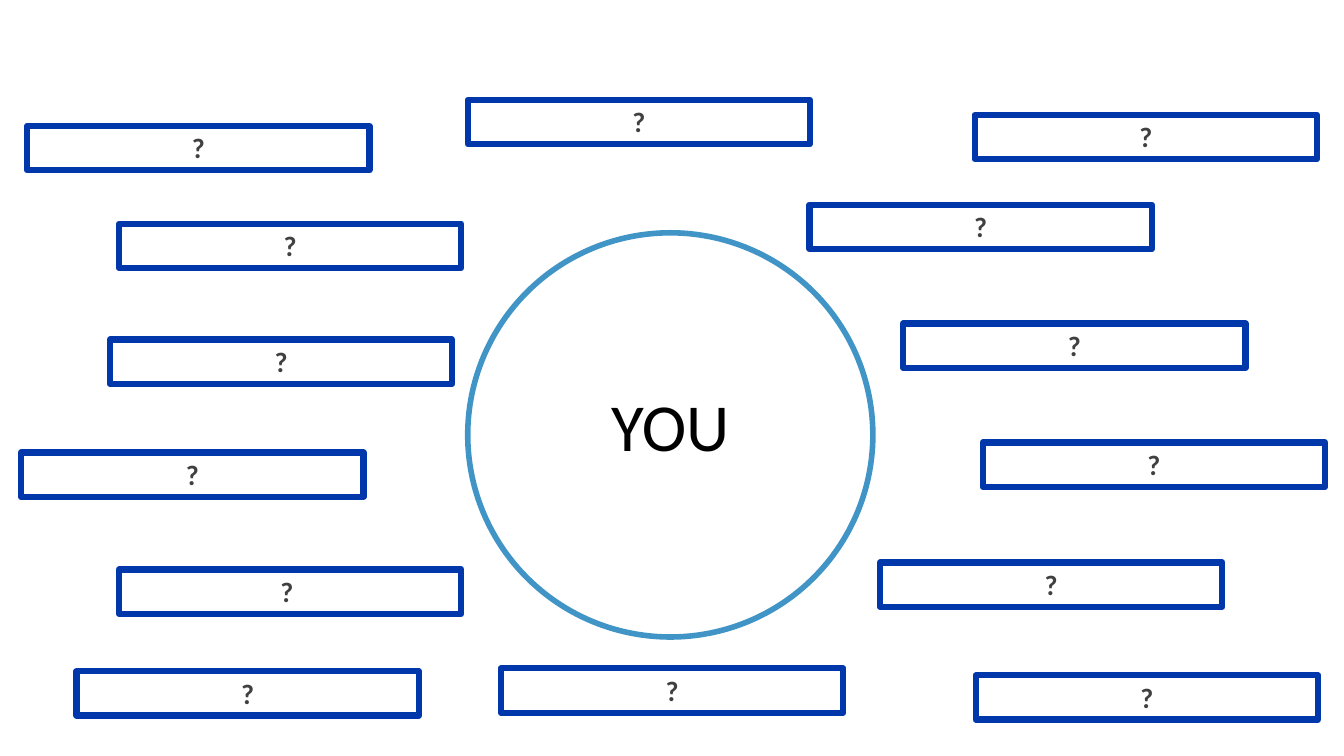
from typing import NamedTuple

from pptx import Presentation
from pptx.dml.color import RGBColor
from pptx.enum.shapes import MSO_SHAPE
from pptx.enum.text import MSO_ANCHOR, MSO_AUTO_SIZE, PP_ALIGN
from pptx.shapes.autoshape import Shape
from pptx.slide import Slide
from pptx.util import Pt

OVAL = MSO_SHAPE.OVAL
RECTANGLE = MSO_SHAPE.RECTANGLE
CENTER = PP_ALIGN.CENTER
MIDDLE = MSO_ANCHOR.MIDDLE
FIT_SHAPE = MSO_AUTO_SIZE.SHAPE_TO_FIT_TEXT

BLACK = RGBColor(0x00, 0x00, 0x00)
DARK_GRAY = RGBColor(0x40, 0x40, 0x40)
ROYAL_BLUE = RGBColor(0x00, 0x37, 0xAA)
SKY_BLUE = RGBColor(0x41, 0x94, 0xC6)
FONT = "Calibri"
LABEL_WIDTH, LABEL_HEIGHT = 244.5, 31.7


class Area(NamedTuple):
    left: float
    top: float
    width: float
    height: float


class Label(NamedTuple):
    left: float
    top: float
    text: str = "?"


CIRCLE = Area(334.1, 166.3, 289.4, 288.7)
CENTER_TEXT = Area(356.4, 261.4, 244.8, 83.5)
LABELS = [
    Label(15.1, 323.3),
    Label(702, 316.1),
    Label(78.5, 242.6),
    Label(696.2, 82.1),
    Label(19.4, 90),
    Label(645.1, 231.1),
    Label(628.6, 401.8),
    Label(85, 406.8, "? "),
    Label(357.8, 477.4),
    Label(697, 482.4),
    Label(54.7, 479.5),
    Label(334.1, 71.3),
    Label(578.2, 146.2),
    Label(85, 159.8),
]


def add_outline(page: Slide, kind: MSO_SHAPE, area: Area, color: RGBColor, weight: float) -> Shape:
    shape = page.shapes.add_shape(kind, *map(Pt, area))
    shape.shadow.inherit = False
    shape.fill.background()
    shape.line.color.rgb = color
    shape.line.width = Pt(weight)
    return shape


def write_centered(shape: Shape, text: str, size: float, color: RGBColor, bold: bool) -> None:
    frame = shape.text_frame
    frame.word_wrap = True
    para = frame.paragraphs[0]
    para.text = text
    para.alignment = CENTER
    para.font.name = FONT
    para.font.size = Pt(size)
    para.font.bold = bold
    para.font.color.rgb = color


def add_label(page: Slide, label: Label) -> None:
    area = Area(label.left, label.top, LABEL_WIDTH, LABEL_HEIGHT)
    box = add_outline(page, RECTANGLE, area, ROYAL_BLUE, 4.5)
    write_centered(box, label.text, 20, DARK_GRAY, True)
    box.text_frame.vertical_anchor = MSO_ANCHOR.TOP
    box.text_frame.auto_size = FIT_SHAPE


def main() -> None:
    deck = Presentation()
    deck.slide_width, deck.slide_height = Pt(960), Pt(540)
    page = deck.slides.add_slide(deck.slide_layouts[6])

    add_outline(page, OVAL, CIRCLE, SKY_BLUE, 4)
    center_box = page.shapes.add_textbox(*map(Pt, CENTER_TEXT))
    write_centered(center_box, "YOU", 48, BLACK, False)
    center_box.text_frame.vertical_anchor = MIDDLE

    for label in LABELS:
        add_label(page, label)
    deck.save("out.pptx")


if __name__ == "__main__":
    main()
